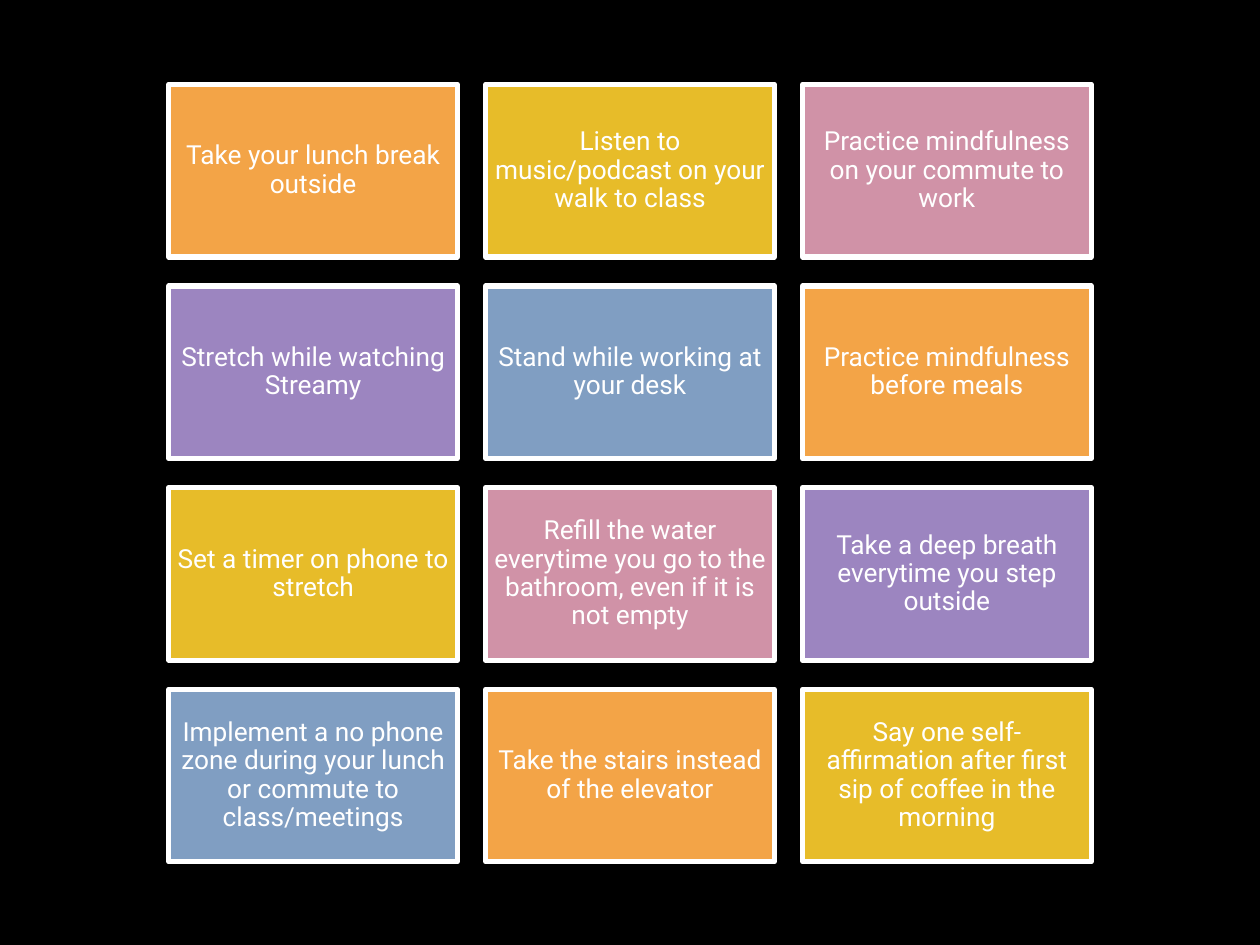
import itertools

import pptx
import pptx.dml.color
import pptx.enum.shapes
import pptx.enum.text
import pptx.util

Inches = pptx.util.Inches
RGBColor = pptx.dml.color.RGBColor

BLACK = RGBColor(0x00, 0x00, 0x00)
WHITE = RGBColor(0xFF, 0xFF, 0xFF)
ORANGE = RGBColor(0xF3, 0xA4, 0x47)
YELLOW = RGBColor(0xE7, 0xBC, 0x29)
PINK = RGBColor(0xD0, 0x92, 0xA7)
PURPLE = RGBColor(0x9C, 0x85, 0xC0)
BLUE = RGBColor(0x80, 0x9E, 0xC2)
TILE_COLORS = (ORANGE, YELLOW, PINK, PURPLE, BLUE)

COLUMNS, ROWS = 3, 4
TILE_WIDTH, TILE_HEIGHT = Inches(2.29), Inches(1.37)
GRID_BOX = (Inches(1.34), Inches(0.67), Inches(7.32), Inches(6.17))

HABITS = (
    "Take your lunch break outside",
    "Listen to music/podcast on your walk to class",
    "Practice mindfulness on your commute to work",
    "Stretch while watching Streamy",
    "Stand while working at your desk",
    "Practice mindfulness before meals",
    "Set a timer on phone to stretch",
    "Refill the water everytime you go to the bathroom, even if it is not empty",
    "Take a deep breath everytime you step outside",
    "Implement a no phone zone during your lunch or commute to class/meetings",
    "Take the stairs instead of the elevator",
    "Say one self-affirmation after first sip of coffee in the morning",
)

FRAME_FORMAT = {
    "word_wrap": True,
    "vertical_anchor": pptx.enum.text.MSO_ANCHOR.MIDDLE,
    "margin_left": Inches(0.06),
    "margin_top": Inches(0.06),
    "margin_right": Inches(0.06),
    "margin_bottom": Inches(0.06),
}
PARA_FORMAT = {"alignment": pptx.enum.text.PP_ALIGN.CENTER, "line_spacing": 0.9}
FONT_FORMAT = {"name": "Roboto", "size": pptx.util.Pt(15)}


def apply_format(target, values):
    """Set each named attribute of the target."""
    for name, value in values.items():
        setattr(target, name, value)


def add_tile(page, box, habit, color):
    """Place one coloured tile with its habit in the given box."""
    tile = page.shapes.add_shape(pptx.enum.shapes.MSO_SHAPE.RECTANGLE, *box)
    tile.shadow.inherit = False
    tile.fill.solid()
    tile.fill.fore_color.rgb = color
    tile.line.color.rgb = WHITE
    tile.line.width = pptx.util.Pt(3)
    frame = tile.text_frame
    apply_format(frame, FRAME_FORMAT)
    para = frame.paragraphs[0]
    apply_format(para, PARA_FORMAT)
    span = para.add_run()
    span.text = habit
    apply_format(span.font, FONT_FORMAT)
    span.font.color.rgb = WHITE


def add_habit_grid(page, box):
    """Spread the habit tiles evenly over the given box."""
    left, top, width, height = box
    column_step = (width - TILE_WIDTH) // (COLUMNS - 1)
    row_step = (height - TILE_HEIGHT) // (ROWS - 1)
    for index, (habit, color) in enumerate(zip(HABITS, itertools.cycle(TILE_COLORS))):
        row, column = divmod(index, COLUMNS)
        tile_box = (left + column * column_step, top + row * row_step, TILE_WIDTH, TILE_HEIGHT)
        add_tile(page, tile_box, habit, color)


def main():
    """Build and save the deck."""
    deck = pptx.Presentation()
    deck.slide_width, deck.slide_height = Inches(10), Inches(7.5)
    page = deck.slides.add_slide(deck.slide_layouts.get_by_name("Blank"))
    page.background.fill.solid()
    page.background.fill.fore_color.rgb = BLACK
    add_habit_grid(page, GRID_BOX)
    deck.save("out.pptx")


if __name__ == "__main__":
    main()
